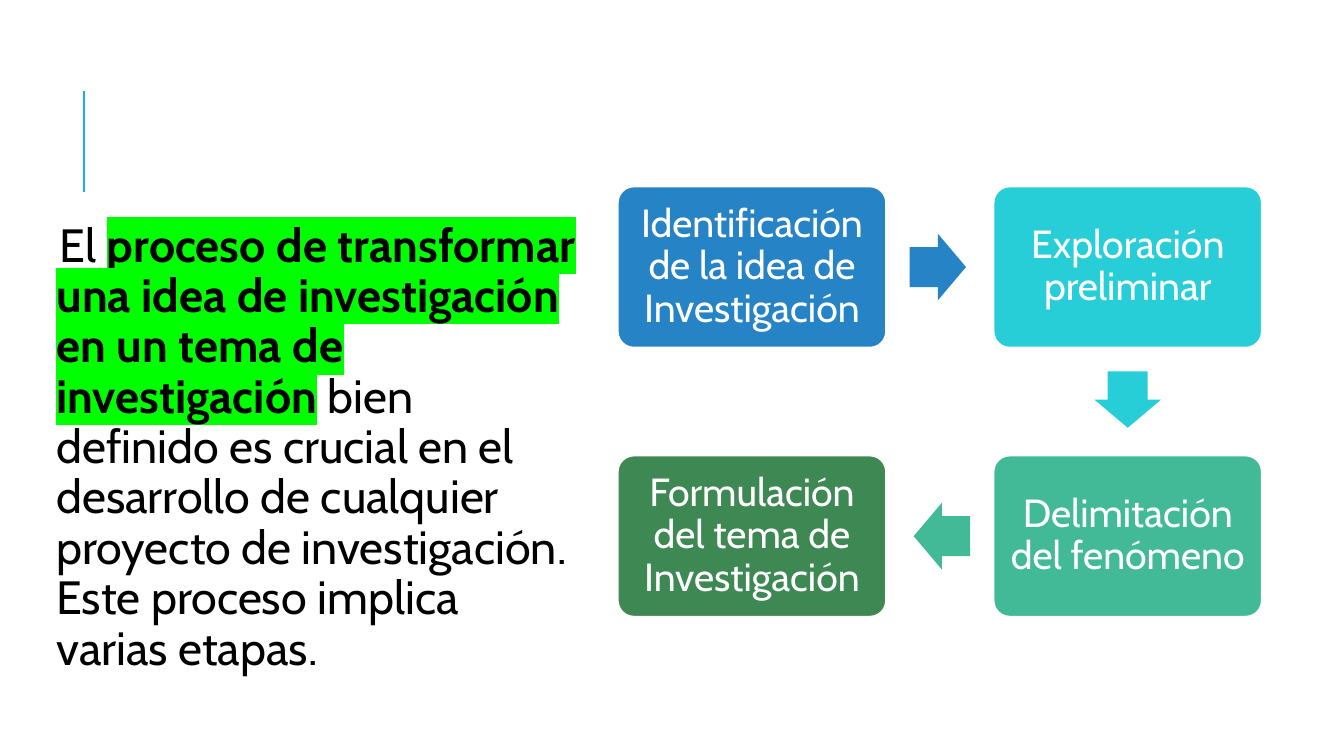
from math import copysign

from lxml import etree
from pptx import Presentation
from pptx.dml.color import RGBColor
from pptx.enum.shapes import MSO_CONNECTOR, MSO_SHAPE
from pptx.enum.text import MSO_ANCHOR, MSO_AUTO_SIZE, PP_ALIGN
from pptx.oxml.ns import qn
from pptx.util import Cm, Pt

STRAIGHT = MSO_CONNECTOR.STRAIGHT
ROUNDED, ARROW = MSO_SHAPE.ROUNDED_RECTANGLE, MSO_SHAPE.RIGHT_ARROW
TOP, MIDDLE = MSO_ANCHOR.TOP, MSO_ANCHOR.MIDDLE
NO_FIT = MSO_AUTO_SIZE.NONE
LEFT, CENTER = PP_ALIGN.LEFT, PP_ALIGN.CENTER

BLACK = RGBColor(0x00, 0x00, 0x00)
WHITE = RGBColor(0xFF, 0xFF, 0xFF)
SKY = RGBColor(0x1C, 0xAD, 0xE4)
BLUE = RGBColor(0x26, 0x83, 0xC6)
CYAN = RGBColor(0x27, 0xCE, 0xD7)
TEAL = RGBColor(0x42, 0xBA, 0x97)
GREEN = RGBColor(0x3E, 0x88, 0x53)
LIME = RGBColor(0x00, 0xFF, 0x00)

# Lengths in centimetres
COLUMNS, ROWS = (15.57, 25.04), (4.7, 11.48)
STAGE_W, STAGE_H = 6.76, 4.06
ARROW_W, ARROW_H = 1.42, 1.68
ARROW_SHIFT = 0.05

# Text, column, row, colour
STAGES = [
    ("Identificación de la idea de Investigación", 0, 0, BLUE),
    ("Exploración preliminar", 1, 0, CYAN),
    ("Delimitación del fenómeno", 1, 1, TEAL),
    ("Formulación del tema de Investigación", 0, 1, GREEN),
]

# Text, bold, highlight
INTRO = [
    ("El ", False, None),
    ("proceso de transformar una idea de investigación en un tema de investigación",
     True, LIME),
    (" ", True, None),
    ("bien definido es crucial en el desarrollo de cualquier proyecto de "
     "investigación. Este proceso implica varias etapas.", False, None),
]


def apply(target, values):
    for name, value in values.items():
        setattr(target, name, value)


def add_color(parent, tag, color):
    element = etree.SubElement(parent, qn(tag))
    etree.SubElement(element, qn("a:srgbClr"), val=str(color))
    return element


def stage_center(column, row):
    return COLUMNS[column] + STAGE_W / 2, ROWS[row] + STAGE_H / 2


class StageSlide:
    font_name = "Cabin"

    def __init__(self, slide):
        self.slide = slide
        self.shapes = slide.shapes

    def style(self, run, size, color, bold=False):
        apply(run.font, {"name": self.font_name, "size": Pt(size), "bold": bold})
        run.font.color.rgb = color

    def frame(self, shape, inset, anchor):
        margins = {f"margin_{side}": Cm(inset)
                   for side in ("left", "right", "top", "bottom")}
        apply(shape.text_frame, {"word_wrap": True, "auto_size": NO_FIT,
                                 "vertical_anchor": anchor, **margins})

    def accent_line(self, x, top, bottom):
        line = self.shapes.add_connector(STRAIGHT, Cm(x), Cm(bottom), Cm(x), Cm(top))
        line.line.color.rgb = SKY
        line.line.width = Pt(1.5)
        etree.SubElement(line._element.spPr, qn("a:effectLst"))

    def intro(self, left, top, width, height):
        body = self.slide.placeholders[1]
        apply(body, {"left": Cm(left), "top": Cm(top),
                     "width": Cm(width), "height": Cm(height)})
        self.frame(body, 0.13, TOP)
        paragraph = body.text_frame.paragraphs[0]
        apply(paragraph, {"alignment": LEFT, "line_spacing": 0.9,
                          "space_before": Pt(6), "space_after": Pt(6)})
        properties = paragraph._p.get_or_add_pPr()
        properties.set("marL", str(Cm(0.25)))
        properties.set("indent", str(Cm(-0.25)))
        add_color(properties, "a:buClr", SKY)
        etree.SubElement(properties, qn("a:buChar"), char=" ")
        for text, bold, highlight in INTRO:
            run = paragraph.add_run()
            run.text = text
            self.style(run, 33.3, BLACK, bold)
            if highlight is not None:
                run_properties = run._r.get_or_add_rPr()
                marker = add_color(run_properties, "a:highlight", highlight)
                run_properties.find(qn("a:latin")).addprevious(marker)

    def stage(self, text, column, row, color):
        box = self.shapes.add_shape(ROUNDED, Cm(COLUMNS[column]), Cm(ROWS[row]),
                                    Cm(STAGE_W), Cm(STAGE_H))
        box.adjustments[0] = 0.1
        box.shadow.inherit = False
        box.fill.solid()
        box.fill.fore_color.rgb = color
        box.line.color.rgb = WHITE
        box.line.width = Pt(1.25)
        self.frame(box, 0.28, MIDDLE)
        paragraph = box.text_frame.paragraphs[0]
        apply(paragraph, {"alignment": CENTER, "line_spacing": 0.9})
        run = paragraph.add_run()
        run.text = text
        self.style(run, 28, WHITE)

    def arrow(self, start, end, color):
        """Point from one stage to the next, set slightly back from the midpoint."""
        (x1, y1), (x2, y2) = start, end
        x, y = (x1 + x2) / 2, (y1 + y2) / 2
        if y1 == y2:
            x -= copysign(ARROW_SHIFT, x2 - x1)
            rotation = 0 if x2 > x1 else 180
        else:
            y -= copysign(ARROW_SHIFT, y2 - y1)
            rotation = 90 if y2 > y1 else 270
        arrow = self.shapes.add_shape(ARROW, Cm(x - ARROW_W / 2), Cm(y - ARROW_H / 2),
                                      Cm(ARROW_W), Cm(ARROW_H))
        arrow.adjustments[0] = 0.6
        arrow.adjustments[1] = 0.5
        arrow.rotation = rotation
        arrow.shadow.inherit = False
        arrow.fill.solid()
        arrow.fill.fore_color.rgb = color
        arrow.line.fill.background()


def main():
    deck = Presentation()
    deck.slide_width, deck.slide_height = Cm(33.87), Cm(19.05)
    slide = deck.slides.add_slide(deck.slide_layouts[1])
    empty_title = slide.shapes.title._element
    empty_title.getparent().remove(empty_title)

    page = StageSlide(slide)
    page.accent_line(2.12, 2.29, 4.83)
    page.intro(1.04, 5.46, 13.65, 11.68)
    for stage in STAGES:
        page.stage(*stage)
    for (_, *start, color), (_, *end, _) in zip(STAGES, STAGES[1:]):
        page.arrow(stage_center(*start), stage_center(*end), color)
    deck.save("out.pptx")


if __name__ == "__main__":
    main()
